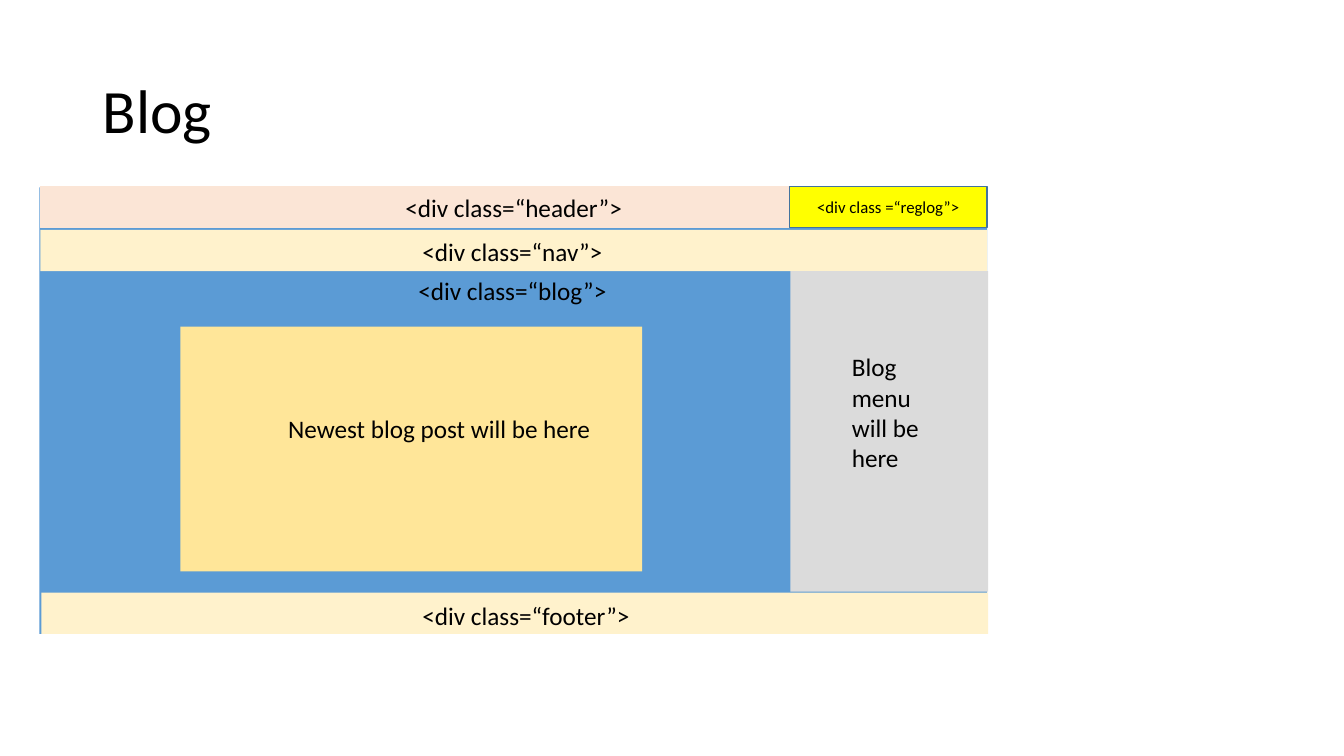
from pptx import Presentation
from pptx.dml.color import RGBColor
from pptx.enum.shapes import MSO_SHAPE as Shape
from pptx.enum.text import MSO_ANCHOR as Anchor, MSO_AUTO_SIZE as AutoSize, PP_ALIGN as Align
from pptx.util import Emu, Pt

PX = 9144  # EMU per px, 100 px to the inch


def px(*lengths):
    return [Emu(length * PX) for length in lengths]


def color(hex_code):
    return RGBColor.from_string(hex_code)


class Wireframe:
    font = "Calibri"
    ink = "000000"

    def __init__(self, slide):
        self.shapes = slide.shapes

    def set_text(self, shape, text, size, align=Align.LEFT):
        para = shape.text_frame.paragraphs[0]
        para.text = text
        para.alignment = align
        para.font.name = self.font
        para.font.size = Pt(size)
        para.font.color.rgb = color(self.ink)
        return para

    def block(self, left, top, width, height, fill, line=None, text=None, size=18):
        box = self.shapes.add_shape(Shape.RECTANGLE, *px(left, top, width, height))
        box.shadow.inherit = False
        box.fill.solid()
        box.fill.fore_color.rgb = color(fill)
        if line:
            box.line.color.rgb = color(line)
            box.line.width = Pt(1)
        else:
            box.line.fill.background()
        if text:
            box.text_frame.vertical_anchor = Anchor.MIDDLE
            self.set_text(box, text, size, Align.CENTER)

    def label(self, left, top, width, height, text, wrap=False):
        box = self.shapes.add_textbox(*px(left, top, width, height))
        box.text_frame.word_wrap = wrap
        box.text_frame.auto_size = AutoSize.SHAPE_TO_FIT_TEXT
        self.set_text(box, text, 18)

    def title(self, left, top, width, height, text):
        box = self.shapes.add_textbox(*px(left, top, width, height))
        box.text_frame.word_wrap = True
        box.text_frame.vertical_anchor = Anchor.MIDDLE
        self.set_text(box, text, 44).line_spacing = 0.9


def main():
    deck = Presentation()
    deck.slide_width, deck.slide_height = px(1333, 750)
    page = Wireframe(deck.slides.add_slide(deck.slide_layouts[6]))

    page.title(92, 40, 1150, 145, "Blog")

    # Page body behind all sections
    page.block(39, 186, 940, 443, "5B9BD5")

    # Header with login area
    page.block(40, 185, 939, 41, "FBE5D6", "FBE5D6", "<div class=“header”>")
    page.block(783, 185, 196, 41, "FFFF00", "43739E", "<div class =“reglog”>", 12)

    # Navigation and blog heading
    page.block(40, 228, 939, 41, "FFF2CC")
    page.label(409, 230, 201, 40, "<div class=“nav”>")
    page.label(405, 268, 209, 40, "<div class=“blog”>")

    # Footer
    page.block(41, 588, 939, 41, "FFF2CC")
    page.label(409, 591, 228, 40, "<div class=“footer”>")

    # Side menu
    page.block(784, 269, 196, 318, "DBDBDB")
    page.label(835, 344, 118, 131, "Blog menu will be here", wrap=True)

    # Newest post
    page.block(179, 324, 458, 243, "FFE699")
    page.label(276, 405, 324, 40, "Newest blog post will be here")

    deck.save("out.pptx")


if __name__ == "__main__":
    main()
